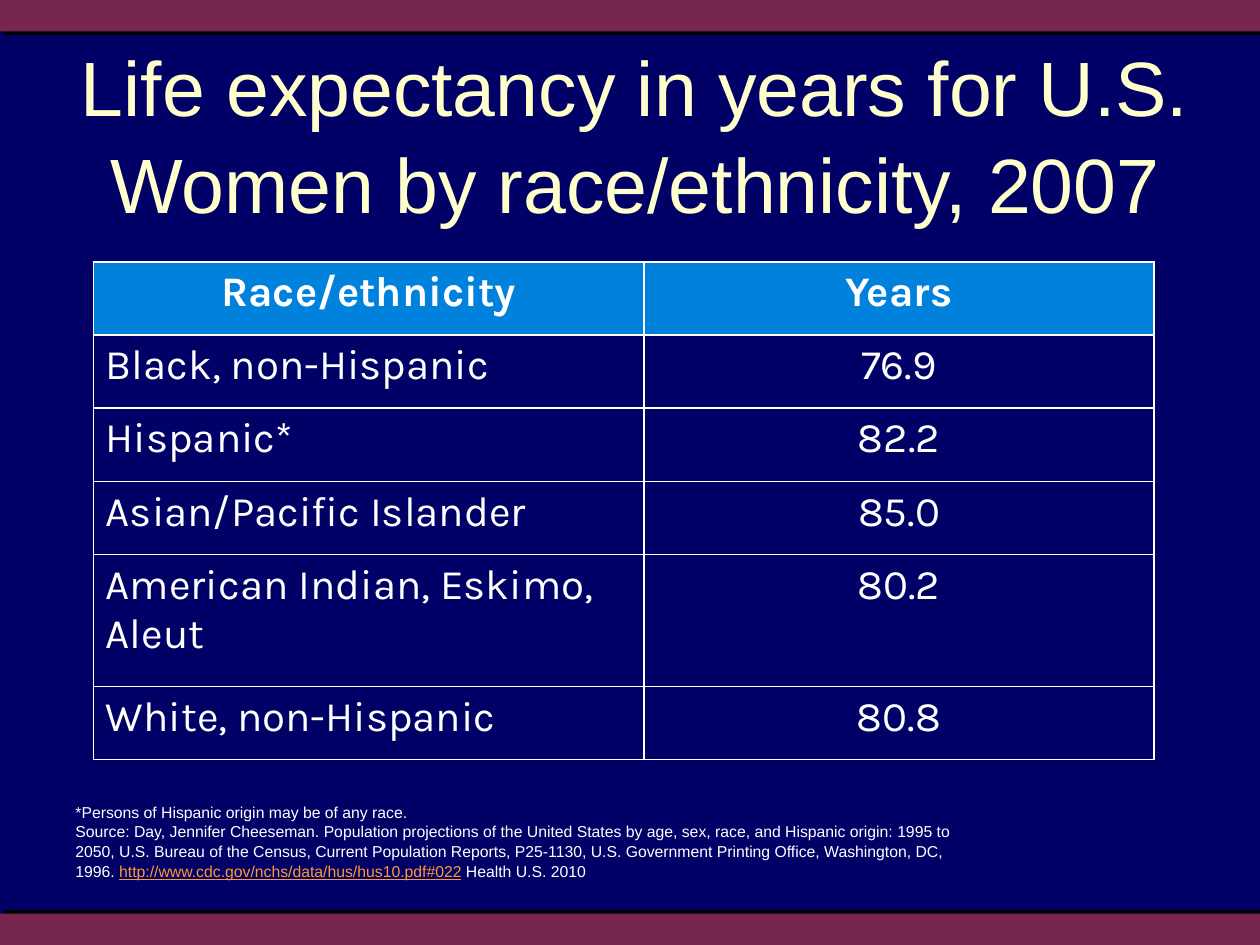
"""Build a slide with a table of life expectancy of U.S. women by race/ethnicity."""
from dataclasses import dataclass

from pptx import Presentation
from pptx.dml.color import RGBColor as Color
from pptx.enum.shapes import MSO_SHAPE as Shape
from pptx.enum.text import MSO_ANCHOR as Anchor, PP_ALIGN as Align
from pptx.oxml import parse_xml
from pptx.oxml.ns import nsdecls
from pptx.util import Inches, Pt

TITLE = "Life expectancy in years for U.S. Women by race/ethnicity, 2007"
ROWS = [
    ("Race/ethnicity", "Years"),
    ("Black, non-Hispanic", "76.9"),
    ("Hispanic*", "82.2"),
    ("Asian/Pacific Islander", "85.0"),
    ("American Indian, Eskimo, Aleut", "80.2"),
    ("White, non-Hispanic", "80.8"),
]
NOTES = [
    [("*Persons of Hispanic origin may be of any race.", False)],
    [
        ("Source: Day, Jennifer Cheeseman. Population projections of the United States "
         "by age, sex, race, and Hispanic origin: 1995 to 2050, U.S. Bureau of the Census, "
         "Current Population Reports, P25-1130, U.S. Government Printing Office, "
         "Washington, DC, 1996. ", False),
        ("http://www.cdc.gov/nchs/data/hus/hus10.pdf#022", True),
        (" Health U.S. 2010", False),
    ],
]
BARS = [(0, 45), (7.25, 315)]
COLUMN_WIDTHS = [4.37, 4.05]
ROW_HEIGHTS = [0.58, 0.58, 0.58, 0.58, 1.05, 0.58]


@dataclass(frozen=True)
class Theme:
    """Colours, fonts and type sizes of the slide."""
    back: str = "000066"
    bar: str = "77274F"
    title: str = "FFFFCC"
    header: str = "0082DC"
    text: str = "FFFFFF"
    link: str = "FF9933"
    shadow: str = "000000"
    font: str = "Arial"
    table_font: str = "Karla"
    title_size: int = 44
    table_size: int = 24
    note_size: int = 9
    spacing: float = 1.05


THEME = Theme()


def paint(fill, color):
    """Make a fill solid in the given colour."""
    fill.solid()
    fill.fore_color.rgb = Color.from_string(color)


def add_span(para, text, size, color, font=THEME.font, bold=False, underline=False):
    """Append one formatted run to a paragraph."""
    span = para.add_run()
    span.text = text
    span.font.name, span.font.size = font, Pt(size)
    span.font.bold, span.font.underline = bold, underline
    span.font.color.rgb = Color.from_string(color)


def add_bar(page, top, angle):
    """Add a full-width bar with a hard shadow cast at the given angle."""
    bar = page.shapes.add_shape(Shape.RECTANGLE, 0, Inches(top), Inches(10), Inches(0.25))
    paint(bar.fill, THEME.bar)
    bar.line.fill.background()
    bar.shadow.inherit = False
    effects = bar._element.spPr.find("{*}effectLst")
    effects.append(parse_xml(
        f'<a:outerShdw {nsdecls("a")} dist="{Pt(2.8)}" dir="{angle * 60000}" '
        f'algn="ctr" rotWithShape="0"><a:srgbClr val="{THEME.shadow}"/></a:outerShdw>'))


def add_frame(page, left, top, width, height, anchor):
    """Add a wrapping text box and return its text frame."""
    box = page.shapes.add_textbox(Inches(left), Inches(top), Inches(width), Inches(height))
    frame = box.text_frame
    frame.word_wrap = True
    frame.vertical_anchor = anchor
    return frame


def add_title(page):
    """Add the centred slide title."""
    frame = add_frame(page, 0.56, 0.25, 8.97, 2.15, Anchor.TOP)
    frame.margin_left = frame.margin_right = frame.margin_bottom = 0
    frame.margin_top = Inches(0.03)
    para = frame.paragraphs[0]
    para.alignment, para.line_spacing = Align.CENTER, THEME.spacing
    add_span(para, TITLE, THEME.title_size, THEME.title)


def add_borders(cell):
    """Draw a thin line on all four sides of a cell."""
    properties = cell._tc.get_or_add_tcPr()
    for index, side in enumerate("LRTB"):
        properties.insert(index, parse_xml(
            f'<a:ln{side} {nsdecls("a")} w="{Pt(1)}"><a:solidFill>'
            f'<a:srgbClr val="{THEME.text}"/></a:solidFill></a:ln{side}>'))


def add_figures(page):
    """Add the table of years by group."""
    table = page.shapes.add_table(
        len(ROWS), len(COLUMN_WIDTHS), Inches(0.74), Inches(2.08),
        Inches(sum(COLUMN_WIDTHS)), Inches(sum(ROW_HEIGHTS))).table
    table.horz_banding = False
    for column, width in zip(table.columns, COLUMN_WIDTHS):
        column.width = Inches(width)
    for row, height in zip(table.rows, ROW_HEIGHTS):
        row.height = Inches(height)
    for r, values in enumerate(ROWS):
        for c, value in enumerate(values):
            cell = table.cell(r, c)
            header = r == 0
            if header:
                paint(cell.fill, THEME.header)
            else:
                cell.fill.background()
            add_borders(cell)
            para = cell.text_frame.paragraphs[0]
            para.alignment = Align.CENTER if header or c else Align.LEFT
            add_span(para, value, THEME.table_size, THEME.text, THEME.table_font, header)


def add_notes(page):
    """Add the footnote and the source line."""
    frame = add_frame(page, 0.5, 6.32, 7.42, 0.71, Anchor.MIDDLE)
    for index, spans in enumerate(NOTES):
        para = frame.add_paragraph() if index else frame.paragraphs[0]
        para.line_spacing = THEME.spacing
        for text, linked in spans:
            color = THEME.link if linked else THEME.text
            add_span(para, text, THEME.note_size, color, underline=linked)


def main():
    """Assemble and save the deck."""
    deck = Presentation()
    deck.slide_width, deck.slide_height = Inches(10), Inches(7.5)
    page = deck.slides.add_slide(deck.slide_layouts[6])
    paint(page.background.fill, THEME.back)
    for top, angle in BARS:
        add_bar(page, top, angle)
    add_title(page)
    add_figures(page)
    add_notes(page)
    deck.save("out.pptx")


if __name__ == "__main__":
    main()
